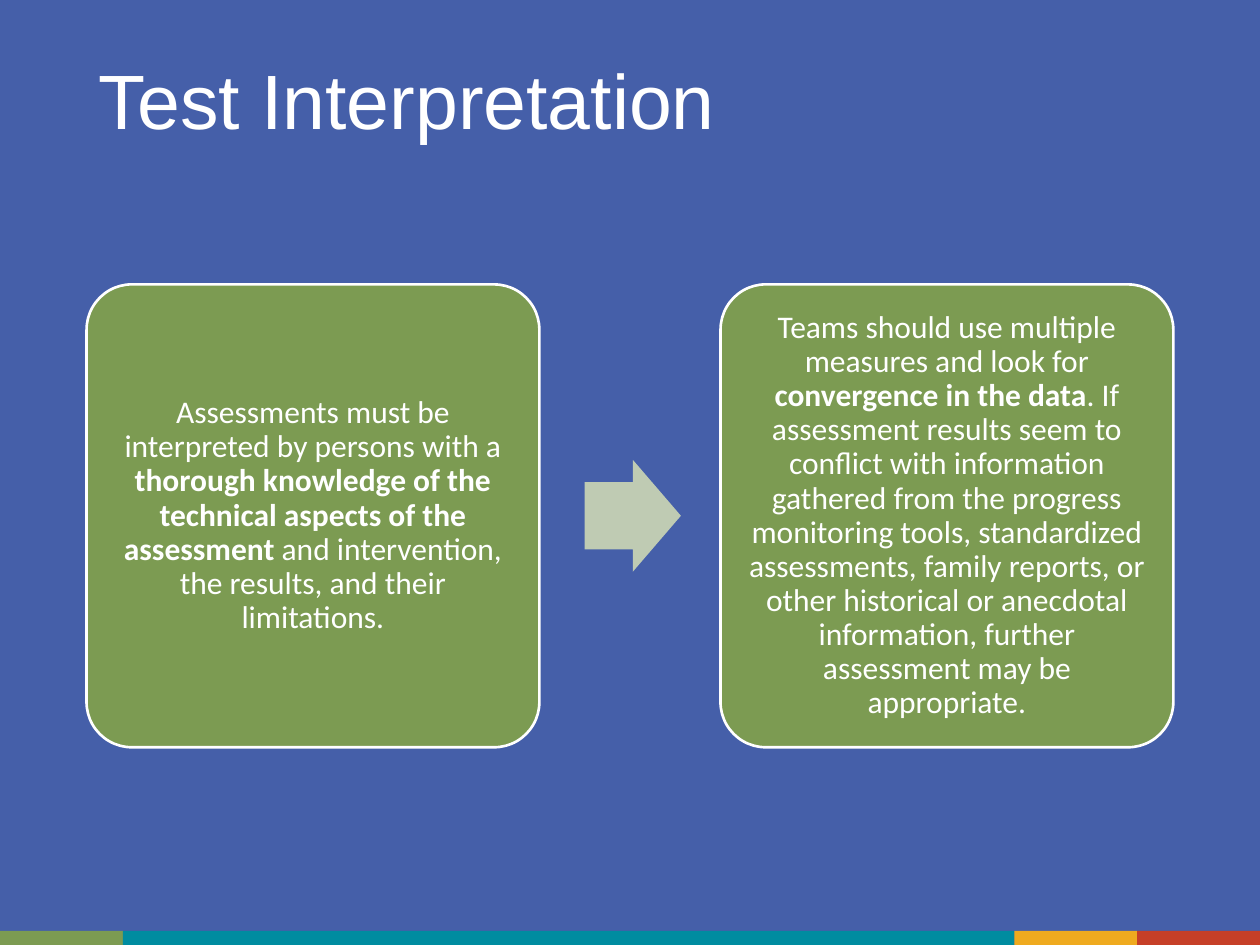
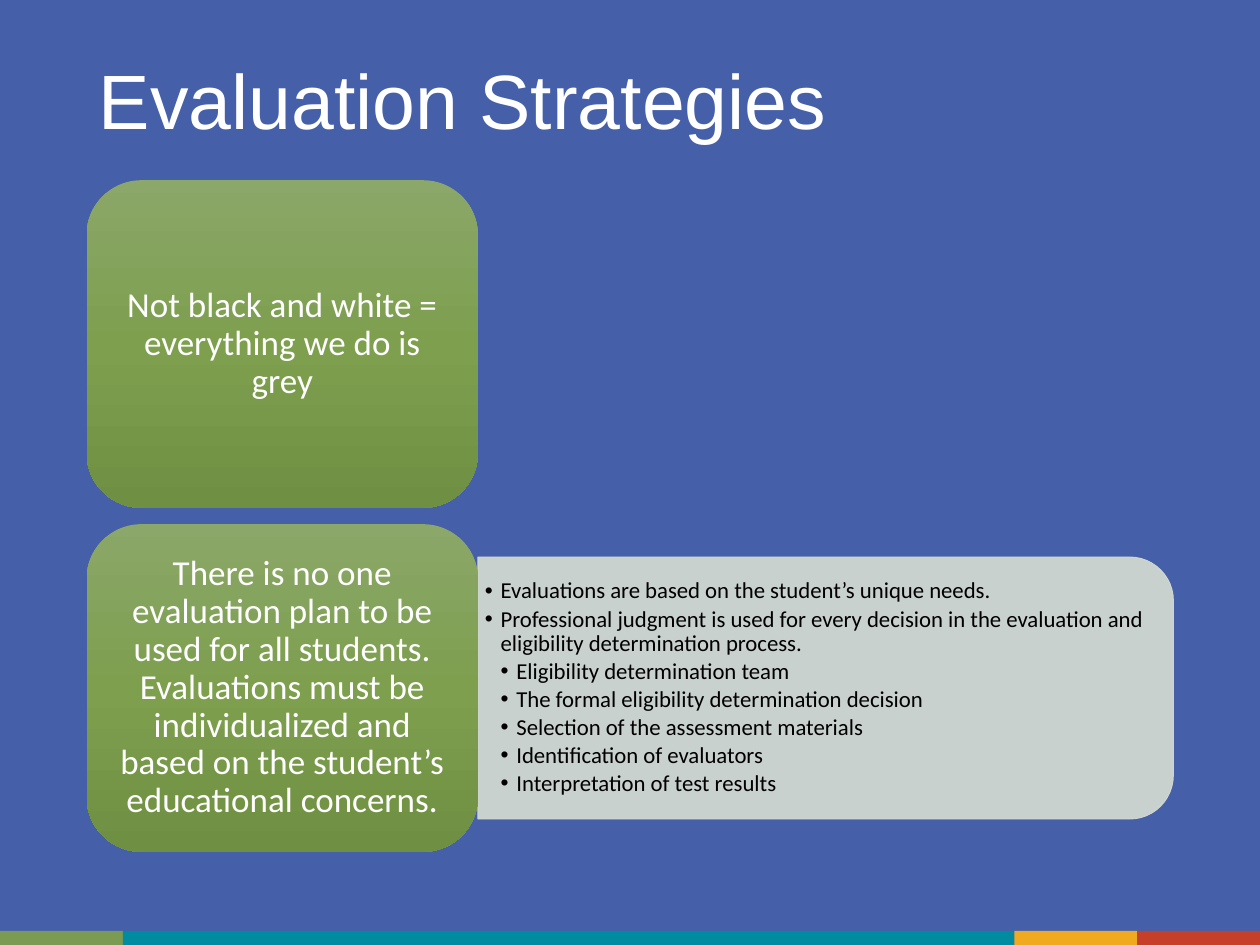
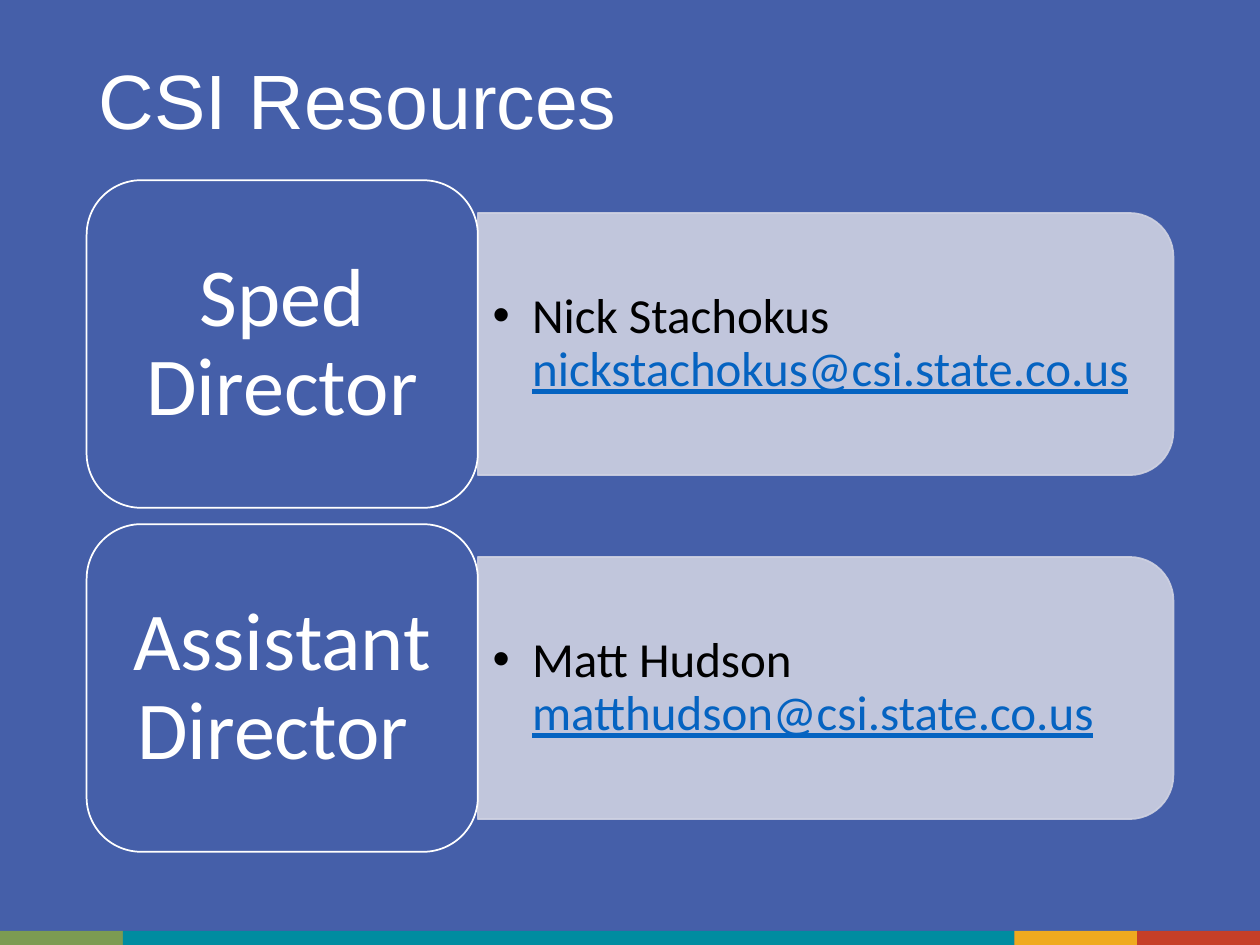
from copy import deepcopy

from lxml import etree
from pptx import Presentation
from pptx.dml.color import RGBColor
from pptx.enum.shapes import MSO_SHAPE
from pptx.enum.text import MSO_ANCHOR, PP_ALIGN
from pptx.oxml.ns import qn
from pptx.util import Pt

RECT = MSO_SHAPE.RECTANGLE
ROUND_RECT = MSO_SHAPE.ROUNDED_RECTANGLE
ROUND_TOP = MSO_SHAPE.ROUND_2_SAME_RECTANGLE
RIGHT_ARROW = MSO_SHAPE.RIGHT_ARROW
MIDDLE = MSO_ANCHOR.MIDDLE
LEFT, CENTER = PP_ALIGN.LEFT, PP_ALIGN.CENTER

BLUE = RGBColor(0x45, 0x5F, 0xA9)
GREEN = RGBColor(0x7C, 0x9B, 0x52)
TEAL = RGBColor(0x00, 0x8C, 0xA0)
AMBER = RGBColor(0xEF, 0xAA, 0x1F)
RED = RGBColor(0xC6, 0x3F, 0x28)
WHITE = RGBColor(0xFF, 0xFF, 0xFF)
BLACK = RGBColor(0x00, 0x00, 0x00)
LINK = RGBColor(0x05, 0x63, 0xC1)
ARROW_GREEN = RGBColor(0xBF, 0xCB, 0xB3)
PANEL_GREEN = RGBColor(0xD7, 0xDE, 0xD1)
PANEL_BLUE = RGBColor(0xCF, 0xD2, 0xE2)
CARD_GRADIENT = [RGBColor(0x8B, 0xA7, 0x69), RGBColor(0x7D, 0x9F, 0x4E),
                 RGBColor(0x6F, 0x90, 0x42)]

WIDTH, HEIGHT = 720, 540
MARGIN, CONTENT_W = 49.5, 621
ROWS_BOX = (MARGIN, 103, CONTENT_W, 383.75)
FLOW_BOX = (MARGIN, 162.5, CONTENT_W, 264.5)


def write(tf, paragraphs, size, color=WHITE, font="Calibri", align=LEFT,
          insets=(7.2, 3.6), indent=0):
    """Each paragraph is (level, runs), each run (text, overrides); level 0 has no bullet."""
    tf.word_wrap = True
    tf.vertical_anchor = MIDDLE
    tf.margin_left = tf.margin_right = Pt(insets[0])
    tf.margin_top = tf.margin_bottom = Pt(insets[1])
    for i, (level, runs) in enumerate(paragraphs):
        p = tf.add_paragraph() if i else tf.paragraphs[0]
        p.alignment = align
        p.line_spacing = 0.9
        if level:
            p.level = level
            p.space_after = Pt(size * 0.15)
            pPr = p._p.get_or_add_pPr()
            pPr.set("marL", str(Pt(indent * level)))
            pPr.set("indent", str(Pt(-indent)))
            etree.SubElement(pPr, qn("a:buFont"), typeface="Arial")
            etree.SubElement(pPr, qn("a:buChar"), char="•")
        for text, style in runs:
            r = p.add_run()
            r.text = text
            r.font.name, r.font.size = font, Pt(size)
            r.font.bold = style.get("bold", False)
            r.font.underline = style.get("underline", False)
            r.font.color.rgb = style.get("color", color)


def plain(text, level=0):
    return level, [(text, {})]


def add_shape(s, kind, box, fill, line=None, line_w=1):
    """The fill is one colour, or a list of colours for a gradient."""
    sp = s.shapes.add_shape(kind, *map(Pt, box))
    sp.shadow.inherit = False
    if isinstance(fill, list):
        set_gradient(sp, fill)
    else:
        sp.fill.solid()
        sp.fill.fore_color.rgb = fill
    if line is None:
        sp.line.fill.background()
    else:
        sp.line.color.rgb = line
        sp.line.width = Pt(line_w)
    return sp


def set_gradient(sp, colors):
    """Evenly spaced stops from top to bottom."""
    sp.fill.gradient()
    sp.fill.gradient_angle = 270
    stops = sp._element.spPr.find(".//" + qn("a:gsLst"))
    while len(stops) < len(colors):
        stops.append(deepcopy(stops[0]))
    for i, (stop, color) in enumerate(zip(sp.fill.gradient_stops, colors)):
        stop.position = i / (len(colors) - 1)
        stop.color.rgb = color


def set_alpha(sp, percent):
    for color in sp._element.spPr.iter(qn("a:srgbClr")):
        etree.SubElement(color, qn("a:alpha"), val=str(percent * 1000))


def add_text(s, box, paragraphs, size, **fmt):
    tb = s.shapes.add_textbox(*map(Pt, box))
    write(tb.text_frame, paragraphs, size, **fmt)


def new_slide(prs, title):
    s = prs.slides.add_slide(prs.slide_layouts[6])
    # Footer band
    side, height = 70.2, 8
    x = 0
    for color, w in ((GREEN, side), (TEAL, WIDTH - 3 * side), (AMBER, side), (RED, side)):
        add_shape(s, RECT, (x, HEIGHT - height, w, height), color)
        x += w
    # Title
    add_text(s, (MARGIN, 28.75, CONTENT_W, 62), [plain(title)], 44, font="Arial")
    return s


def add_flow(s, box, left_runs, right_runs):
    """Two cards with an arrow between them."""
    x, y, w, h = box
    card_w, arrow_w, arrow_h = w * 5 / 12, 55, 64
    for card_x, runs in ((x, left_runs), (x + w - card_w, right_runs)):
        sp = add_shape(s, ROUND_RECT, (card_x, y, card_w, h), GREEN, WHITE, 1.5)
        sp.adjustments[0] = 0.1
        write(sp.text_frame, [(0, runs)], 18, align=CENTER, insets=(5, 5))
    arrow_x = x + card_w * 1.1
    arrow = add_shape(s, RIGHT_ARROW, (arrow_x, y + (h - arrow_h) / 2, arrow_w, arrow_h),
                      ARROW_GREEN)
    arrow.adjustments[0], arrow.adjustments[1] = 0.6, 0.5


def add_panel(s, box, paragraphs, color, line_w, **fmt):
    """Panel rounded on its right side: a round-top shape turned a quarter."""
    x, y, w, h = box
    sp = add_shape(s, ROUND_TOP, (x + (w - h) / 2, y + (h - w) / 2, h, w), color, color, line_w)
    sp.rotation = 90
    set_alpha(sp, 90)
    inset = 7.3
    add_text(s, (x, y + inset, w - inset, h - 2 * inset), paragraphs, color=BLACK, **fmt)


def add_rows(s, box, rows, card, card_text, panel):
    """Stacked cards, each with an optional panel of bullets to its right."""
    x, y, w, h = box
    row_h = h / (len(rows) + 0.05 * (len(rows) - 1))
    card_w = w * 0.36
    for i, (label, bullets) in enumerate(rows):
        top = y + i * row_h * 1.05
        if bullets:
            add_panel(s, (x + card_w, top + row_h * 0.1, w - card_w, row_h * 0.8),
                      bullets, **panel)
        sp = add_shape(s, ROUND_RECT, (x, top, card_w, row_h), **card)
        write(sp.text_frame, [plain(label)], align=CENTER, **card_text)


def contact(name, email):
    return [(1, [(name + " ", {}), (email, {"color": LINK, "underline": True})])]


def interpretation_slide(prs):
    s = new_slide(prs, "Test Interpretation")
    add_flow(
        s, FLOW_BOX,
        [("Assessments must be interpreted by persons with a ", {}),
         ("thorough knowledge of the technical aspects of the assessment", {"bold": True}),
         (" and intervention, the results, and their limitations.", {})],
        [("Teams should use multiple measures and look for ", {}),
         ("convergence in the data", {"bold": True}),
         (". If assessment results seem to conflict with information gathered from the "
          "progress monitoring tools, standardized assessments, family reports, or other "
          "historical or anecdotal information, further assessment may be appropriate.", {})])


def strategies_slide(prs):
    s = new_slide(prs, "Evaluation Strategies")
    bullets = [
        plain("Evaluations are based on the student’s unique needs.", 1),
        plain("Professional judgment is used for every decision in the evaluation and "
              "eligibility determination process.", 1),
        plain("Eligibility determination team", 2),
        plain("The formal eligibility determination decision", 2),
        plain("Selection of the assessment materials", 2),
        plain("Identification of evaluators", 2),
        plain("Interpretation of test results", 2),
    ]
    rows = [
        ("Not black and white = everything we do is grey", None),
        ("There is no one evaluation plan to be used for all students. Evaluations must be "
         "individualized and based on the student’s educational concerns.", bullets),
    ]
    add_rows(s, ROWS_BOX, rows,
             card=dict(fill=CARD_GRADIENT),
             card_text=dict(size=20, insets=(6, 3)),
             panel=dict(color=PANEL_GREEN, line_w=0.5, size=13, insets=(4, 2), indent=9))


def resources_slide(prs):
    s = new_slide(prs, "CSI Resources")
    rows = [
        ("Sped Director", contact("Nick Stachokus", "nickstachokus@csi.state.co.us")),
        ("Assistant Director ", contact("Matt Hudson", "matthudson@csi.state.co.us")),
    ]
    add_rows(s, ROWS_BOX, rows,
             card=dict(fill=BLUE, line=WHITE),
             card_text=dict(size=47, insets=(14, 7)),
             panel=dict(color=PANEL_BLUE, line_w=1, size=28, insets=(8.5, 4.25), indent=22.5))


def main():
    prs = Presentation()
    prs.slide_width, prs.slide_height = Pt(WIDTH), Pt(HEIGHT)
    background = prs.slide_master.background.fill
    background.solid()
    background.fore_color.rgb = BLUE
    interpretation_slide(prs)
    strategies_slide(prs)
    resources_slide(prs)
    prs.save("out.pptx")


if __name__ == "__main__":
    main()
